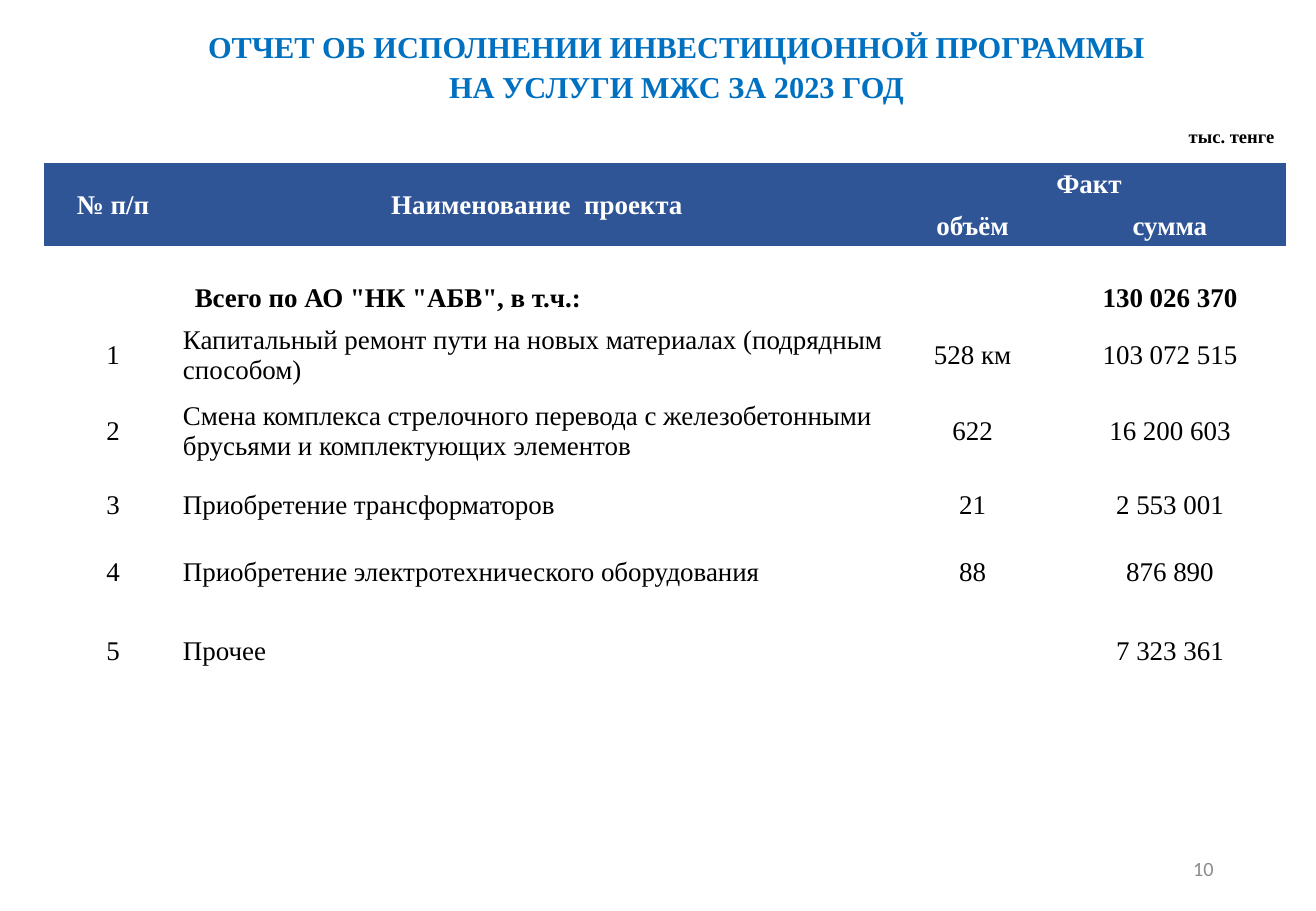
from pptx import Presentation
from pptx.dml.color import RGBColor
from pptx.enum.text import MSO_ANCHOR, MSO_AUTO_SIZE, PP_ALIGN
from pptx.util import Pt

LEFT, CENTER, RIGHT = PP_ALIGN.LEFT, PP_ALIGN.CENTER, PP_ALIGN.RIGHT
MIDDLE, BOTTOM = MSO_ANCHOR.MIDDLE, MSO_ANCHOR.BOTTOM
NO_FIT = MSO_AUTO_SIZE.NONE
PLAIN_TABLE = "{2D5ABB26-0587-4C30-8999-92F81FD0307C}"
SERIF = "Times New Roman"

TITLE = ["ОТЧЕТ ОБ ИСПОЛНЕНИИ ИНВЕСТИЦИОННОЙ ПРОГРАММЫ", "НА УСЛУГИ МЖС ЗА 2023 ГОД"]
COLUMNS = [82, 420.5, 96, 138]
ROW_HEIGHTS = [25, 24.5, 44.5, 40.5, 49, 39, 40.5, 53.5]
HEADER_ROWS, TOTAL_ROW = 2, 2
ROWS = [
    ["№ п/п", "Наименование  проекта", "Факт", ""],
    ["", "", "объём", "сумма"],
    ["", 'Всего по АО "НК "АБВ", в т.ч.:', "", "130 026 370"],
    ["1", "Капитальный ремонт пути на новых материалах (подрядным способом)",
     "528 км", "103 072 515"],
    ["2", "Смена комплекса стрелочного перевода с железобетонными брусьями "
     "и комплектующих элементов", "622", "16 200 603"],
    ["3", "Приобретение трансформаторов", "21", "2 553 001"],
    ["4", "Приобретение электротехнического оборудования", "88", "876 890"],
    ["5", "Прочее", "", "7 323 361"],
]
MERGES = [((0, 0), (1, 0)), ((0, 1), (1, 1)), ((0, 2), (0, 3))]


def rgb(value):
    """Return the colour for a hex string."""
    return RGBColor.from_string(value)


def set_all(target, values):
    """Set every attribute of target listed in values."""
    for name, value in values.items():
        setattr(target, name, value)


def write(tf, lines, align, size, color="000000", bold=False, font=SERIF, spacing=1.0):
    """Fill a text frame with one paragraph per line."""
    for i, line in enumerate(lines):
        p = tf.add_paragraph() if i else tf.paragraphs[0]
        set_all(p, {"alignment": align, "line_spacing": spacing, "space_before": Pt(0)})
        r = p.add_run()
        r.text = line
        set_all(r.font, {"name": font, "size": Pt(size), "bold": bold})
        r.font.color.rgb = rgb(color)


def add_title(s, left, top, width, height):
    """Place the two-line slide title."""
    sp = s.shapes.title
    set_all(sp, {"left": Pt(left), "top": Pt(top), "width": Pt(width), "height": Pt(height)})
    set_all(sp.text_frame, {"auto_size": NO_FIT, "vertical_anchor": MIDDLE, "word_wrap": True})
    write(sp.text_frame, TITLE, CENTER, 18, "0070C0", True, spacing=1.1)


def add_label(s, text, left, top, width, height, size, **style):
    """Place a right-aligned one-line label."""
    tf = s.shapes.add_textbox(Pt(left), Pt(top), Pt(width), Pt(height)).text_frame
    set_all(tf, {"auto_size": NO_FIT, "vertical_anchor": MIDDLE, "word_wrap": True})
    write(tf, [text], RIGHT, size, **style)


def format_cell(cell, row, col, text):
    """Fill and write one cell according to its row and column."""
    header, total = row < HEADER_ROWS, row == TOTAL_ROW
    cell.fill.solid()
    cell.fill.fore_color.rgb = rgb("2F5597" if header else "FFFFFF")
    set_all(cell, {
        "vertical_anchor": BOTTOM if total else MIDDLE,
        "margin_left": Pt(7.5 if total and col == 1 else 0.5),
        "margin_right": Pt(0.5),
        "margin_top": Pt(0.5),
        "margin_bottom": Pt(4.5 if total else 0),
    })
    if text:
        align = LEFT if col == 1 and not header else CENTER
        write(cell.text_frame, [text], align, 16,
              "FFFFFF" if header else "000000", header or total)


def add_report(s, left, top):
    """Place the table of projects with its two-row header."""
    frame = s.shapes.add_table(len(ROWS), len(COLUMNS), Pt(left), Pt(top),
                               Pt(sum(COLUMNS)), Pt(sum(ROW_HEIGHTS)))
    frame.element.xpath(".//a:tableStyleId")[0].text = PLAIN_TABLE
    table = frame.table
    set_all(table, {"first_row": False, "horz_banding": False})
    for column, width in zip(table.columns, COLUMNS):
        column.width = Pt(width)
    for row, height in zip(table.rows, ROW_HEIGHTS):
        row.height = Pt(height)
    for first, last in MERGES:
        table.cell(*first).merge(table.cell(*last))
    for i, values in enumerate(ROWS):
        for j, text in enumerate(values):
            format_cell(table.cell(i, j), i, j, text)


def main():
    """Build the slide and save the presentation."""
    prs = Presentation()
    set_all(prs, {"slide_width": Pt(780), "slide_height": Pt(540)})
    s = prs.slides.add_slide(prs.slide_layouts[5])
    add_title(s, 63, 13, 676, 51)
    add_label(s, "тыс. тенге", 672, 70, 90.5, 21, 11, bold=True)
    add_report(s, 26, 96.5)
    add_label(s, "10", 551, 500.5, 175.5, 29, 12, color="8C8C8C", font="Calibri")
    prs.save("out.pptx")


if __name__ == "__main__":
    main()
